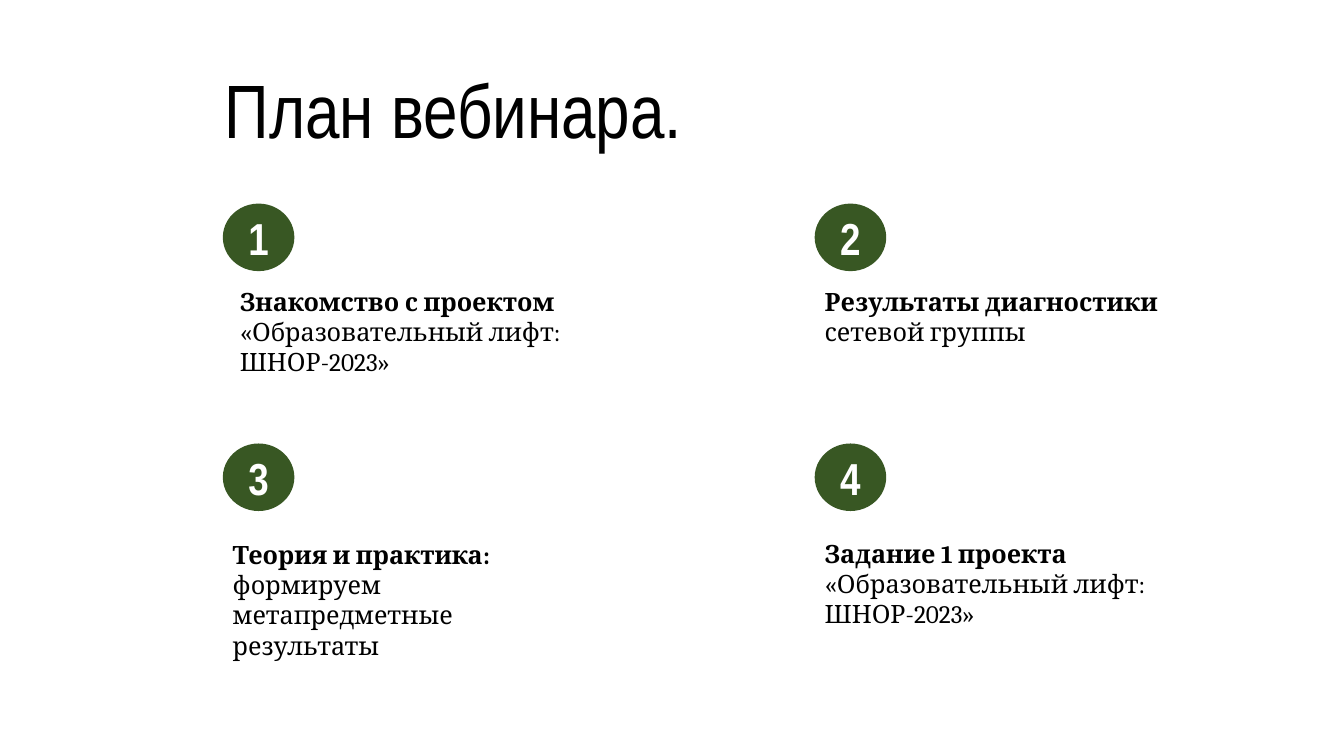
from pptx import Presentation
from pptx.dml.color import RGBColor
from pptx.enum.shapes import MSO_SHAPE
from pptx.enum.text import MSO_ANCHOR, MSO_AUTO_SIZE, PP_ALIGN
from pptx.util import Emu, Pt

PX = 9144  # EMU per px, 100 px to the inch

THEME = {
    "badge": RGBColor(0x38, 0x57, 0x23),
    "title": {"name": "Arial Narrow", "size": Pt(54), "bold": False, "color": RGBColor(0, 0, 0)},
    "number": {"name": "Arial Narrow", "size": Pt(32), "bold": True, "color": RGBColor(255, 255, 255)},
    "lead": {"name": "Cambria", "size": Pt(18), "bold": True, "color": RGBColor(0, 0, 0)},
    "body": {"name": "Cambria", "size": Pt(18), "bold": False, "color": RGBColor(0, 0, 0)},
}


def add_run(p, text, style):
    r = p.add_run()
    r.text = text
    for key, value in THEME[style].items():
        if key == "color":
            r.font.color.rgb = value
        else:
            setattr(r.font, key, value)


def add_text(s, box, paragraphs):
    tf = s.shapes.add_textbox(*[Emu(v * PX) for v in box]).text_frame
    tf.word_wrap = True
    tf.auto_size = MSO_AUTO_SIZE.SHAPE_TO_FIT_TEXT
    for i, runs in enumerate(paragraphs):
        p = tf.add_paragraph() if i else tf.paragraphs[0]
        for text, style in runs:
            add_run(p, text, style)


prs = Presentation()
prs.slide_width, prs.slide_height = Emu(1333 * PX), Emu(750 * PX)
s = prs.slides.add_slide(prs.slide_layouts[6])

# Title
add_text(s, (213, 57, 667, 101), [[("План вебинара.", "title")]])

# Numbered badges on a two by two grid
LEFT, TOP, COL_STEP, ROW_STEP = 221, 202, 587, 238
for i in range(4):
    row, col = divmod(i, 2)
    box = (LEFT + col * COL_STEP, TOP + row * ROW_STEP, 71, 67)
    sp = s.shapes.add_shape(MSO_SHAPE.OVAL, *[Emu(v * PX) for v in box])
    sp.shadow.inherit = False
    sp.fill.solid()
    sp.fill.fore_color.rgb = THEME["badge"]
    sp.line.fill.background()
    tf = sp.text_frame
    tf.vertical_anchor = MSO_ANCHOR.MIDDLE
    p = tf.paragraphs[0]
    p.alignment = PP_ALIGN.CENTER
    add_run(p, str(i + 1), "number")

# Topic under each badge
PROJECT = "«Образовательный лифт: ШНОР-2023»"
topics = [
    ((228, 279, 344, 101), [[("Знакомство с проектом ", "lead"), (PROJECT, "body")]]),
    ((808, 279, 376, 71), [[("Результаты диагностики ", "lead"), ("сетевой группы", "body")]]),
    ((221, 530, 370, 101), [[("Теория и практика:", "lead")],
                            [("формируем метапредметные результаты", "body")]]),
    ((808, 529, 388, 101), [[("Задание 1 проекта ", "lead"), (PROJECT, "body")]]),
]
for box, paragraphs in topics:
    add_text(s, box, paragraphs)

prs.save("out.pptx")
